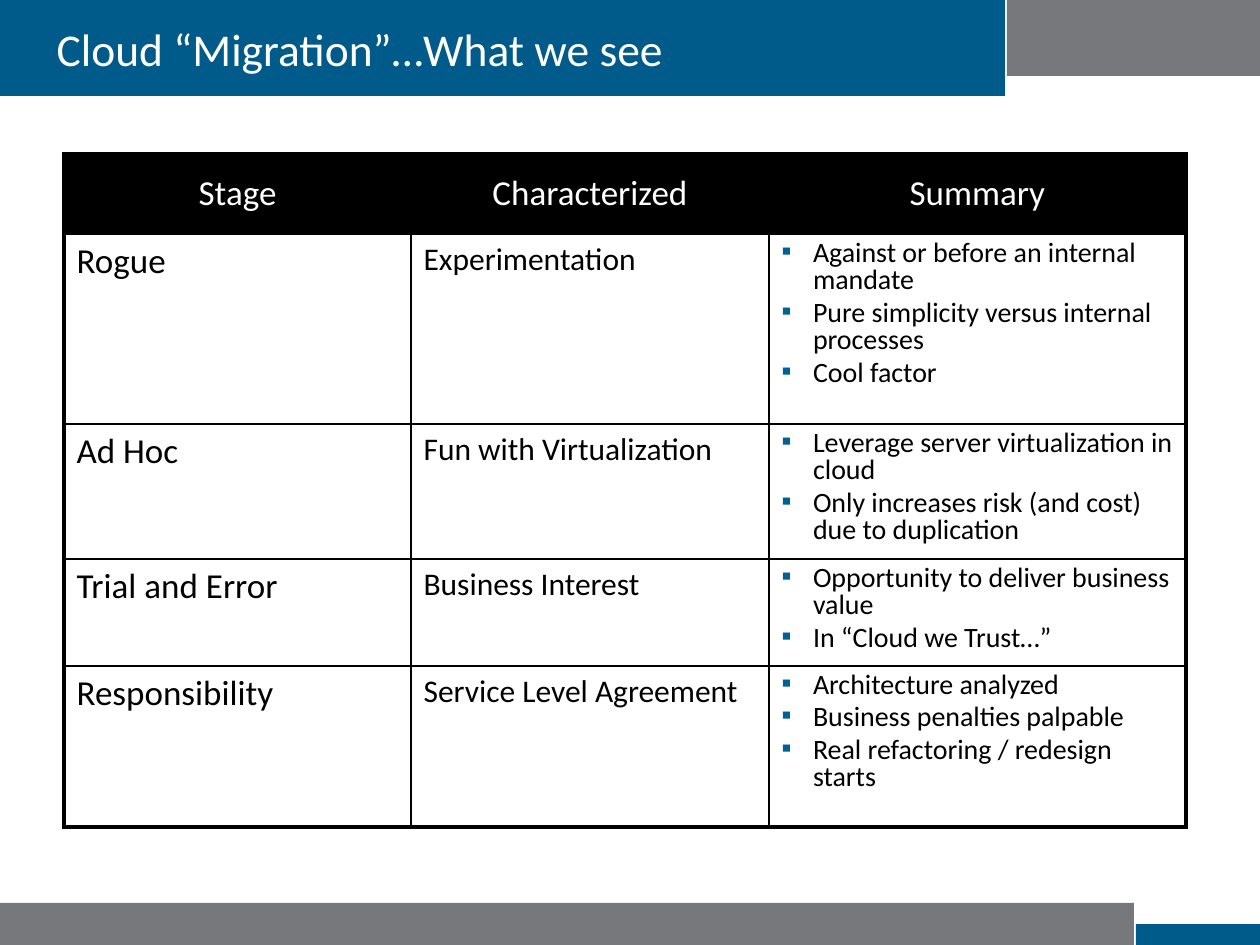
from lxml import etree
from pptx import Presentation
from pptx import util as u
from pptx.dml.color import RGBColor
from pptx.enum import shapes, text
from pptx.oxml import ns

SCALE = 914400 / 126
COLORS = {
    "blue": "005A8A",
    "gray": "77787B",
    "bullet": "006192",
    "black": "000000",
    "white": "FFFFFF",
}
FONT = "Calibri"
HEADERS = ["Stage", "Characterized", "Summary"]
STAGES = [
    ("Rogue", "Experimentation", [
        "Against or before an internal mandate",
        "Pure simplicity versus internal processes",
        "Cool factor",
    ]),
    ("Ad Hoc", "Fun with Virtualization", [
        "Leverage server virtualization in cloud",
        "Only increases risk (and cost) due to duplication",
    ]),
    ("Trial and Error", "Business Interest", [
        "Opportunity to deliver business value",
        "In “Cloud we Trust…”",
    ]),
    ("Responsibility", "Service Level Agreement", [
        "Architecture analyzed",
        "Business penalties palpable",
        "Real refactoring / redesign starts",
    ]),
]
COLUMN_WIDTHS = [347, 358, 417]
ROW_HEIGHTS = [80, 190, 135, 107, 161]
BODY_SIZES = [20, 18, 16]


def px(length):
    return u.Emu(round(length * SCALE))


def rgb(name):
    return RGBColor.from_string(COLORS[name])


def style_paragraph(paragraph, size, color):
    for run in paragraph.runs:
        run.font.name = FONT
        run.font.size = u.Pt(size)
        run.font.bold = False
        run.font.color.rgb = rgb(color)


def add_bar(slide, box, color):
    bar = slide.shapes.add_shape(shapes.MSO_SHAPE.RECTANGLE, *map(px, box))
    bar.shadow.inherit = False
    bar.fill.solid()
    bar.fill.fore_color.rgb = rgb(color)
    bar.line.fill.background()
    slide.shapes.title.element.addprevious(bar.element)


def add_header(slide, box):
    left, top, width, height = box
    add_bar(slide, (left, top, 1005, height), "blue")
    add_bar(slide, (left + 1007, top, width - 1007, height - 20), "gray")
    title = slide.shapes.title
    title.left, title.top, title.width, title.height = map(
        px, (left + 44, top, 922, height))
    frame = title.text_frame
    frame.text = "Cloud “Migration”…What we see"
    frame.word_wrap = True
    frame.auto_size = text.MSO_AUTO_SIZE.NONE
    frame.vertical_anchor = text.MSO_ANCHOR.MIDDLE
    paragraph = frame.paragraphs[0]
    paragraph.alignment = text.PP_ALIGN.LEFT
    style_paragraph(paragraph, 26, "white")


def add_footer(slide, box):
    left, top, width, height = box
    add_bar(slide, (left, top, 1134, height), "gray")
    add_bar(slide, (left + 1136, top + 21, width - 1136, height - 21), "blue")


def set_borders(cell, outer_sides):
    properties = cell._tc.get_or_add_tcPr()
    for side in "LRTB":
        width = u.Pt(2.25 if side in outer_sides else 1)
        line = etree.SubElement(properties, ns.qn(f"a:ln{side}"), w=str(width))
        fill = etree.SubElement(line, ns.qn("a:solidFill"))
        etree.SubElement(fill, ns.qn("a:srgbClr"), val=COLORS["black"])


def add_bullet(paragraph):
    properties = paragraph._p.get_or_add_pPr()
    indent = u.Inches(0.25)
    properties.set("marL", str(indent))
    properties.set("indent", str(-indent))
    color = etree.SubElement(properties, ns.qn("a:buClr"))
    etree.SubElement(color, ns.qn("a:srgbClr"), val=COLORS["bullet"])
    etree.SubElement(properties, ns.qn("a:buFont"), typeface=FONT)
    etree.SubElement(properties, ns.qn("a:buChar"), char="▪")


def fill_cell(cell, content, size, is_header):
    is_list = isinstance(content, list)
    cell.text_frame.text = "\n".join(content) if is_list else content
    for index, paragraph in enumerate(cell.text_frame.paragraphs):
        if is_list:
            add_bullet(paragraph)
            paragraph.line_spacing = 0.8
            paragraph.space_before = u.Pt(3 if index else 0)
        if is_header:
            paragraph.alignment = text.PP_ALIGN.CENTER
        style_paragraph(paragraph, size, "white" if is_header else "black")
    if is_header:
        cell.vertical_anchor = text.MSO_ANCHOR.MIDDLE
    cell.fill.solid()
    cell.fill.fore_color.rgb = rgb("black" if is_header else "white")


def add_stage_table(slide, box):
    rows = [HEADERS, *STAGES]
    last_row, last_column = len(rows) - 1, len(HEADERS) - 1
    table = slide.shapes.add_table(len(rows), len(HEADERS), *map(px, box)).table
    for column, width in zip(table.columns, COLUMN_WIDTHS):
        column.width = px(width)
    for row, height in zip(table.rows, ROW_HEIGHTS):
        row.height = px(height)
    for row_index, row in enumerate(rows):
        for column_index, content in enumerate(row):
            cell = table.cell(row_index, column_index)
            edges = {
                "L": column_index == 0,
                "R": column_index == last_column,
                "T": row_index == 0,
                "B": row_index == last_row,
            }
            set_borders(cell, [side for side in edges if edges[side]])
            is_header = row_index == 0
            size = 20 if is_header else BODY_SIZES[column_index]
            fill_cell(cell, content, size, is_header)


def main():
    presentation = Presentation()
    presentation.slide_width, presentation.slide_height = px(1260), px(945)
    slide = presentation.slides.add_slide(presentation.slide_layouts[5])
    add_footer(slide, (0, 903, 1260, 42))
    add_header(slide, (0, 0, 1260, 96))
    add_stage_table(slide, (64, 154, sum(COLUMN_WIDTHS), sum(ROW_HEIGHTS)))
    presentation.save("out.pptx")


if __name__ == "__main__":
    main()
